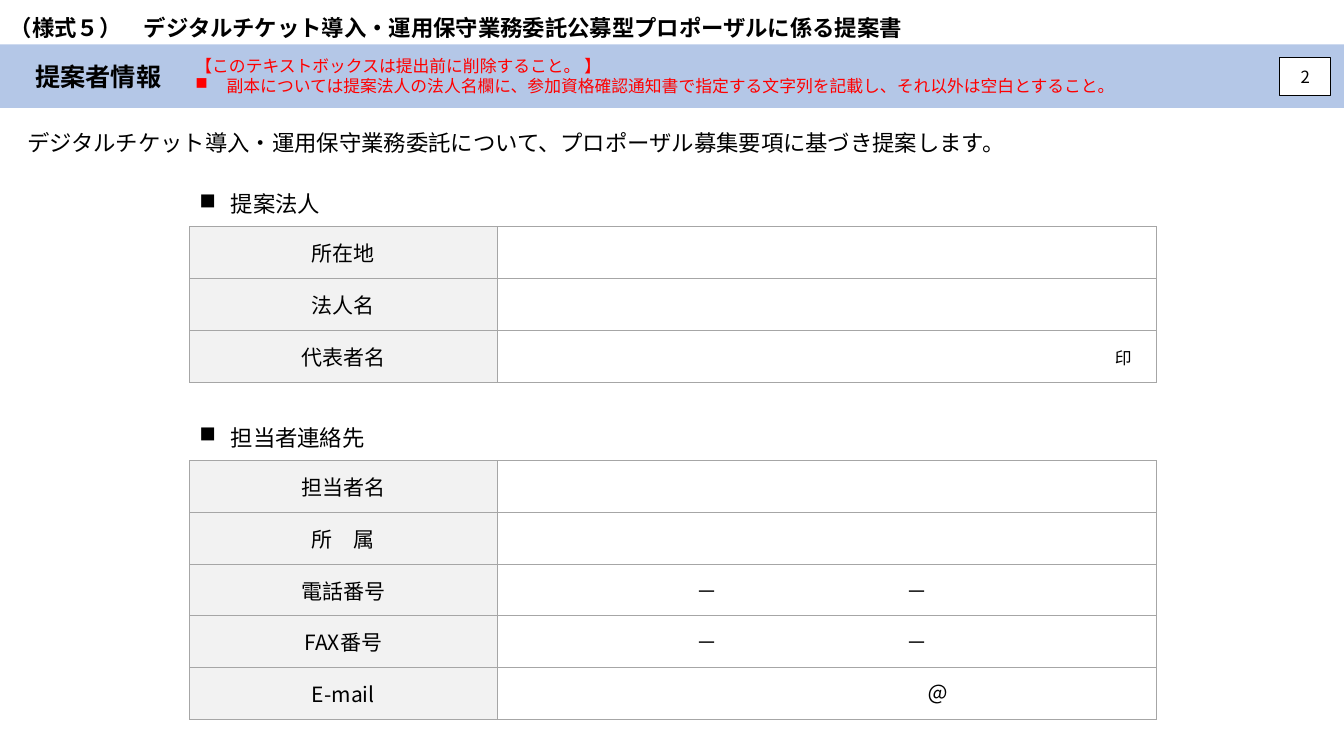
from pptx import Presentation
from pptx.dml.color import RGBColor as RGB
from pptx.enum.shapes import MSO_SHAPE as Shape
from pptx.enum.text import MSO_ANCHOR as Anchor, MSO_AUTO_SIZE as Fit, PP_ALIGN as Align
from pptx.oxml.ns import qn
from pptx.util import Inches, Pt
from lxml.etree import SubElement as Sub

FONT = "Noto Sans CJK JP"
BLACK, WHITE, RED = "000000", "FFFFFF", "FF0000"
BLUE, GREY, EDGE = "B4C7E7", "F2F2F2", "A6A6A6"
WIDE, TALL = 13.33, 7.5
LEFT, COLS = 1.88, (3.05, 6.54)
HEAD, ROW = 0.41, 0.513

OWNER = [("所在地", ""), ("法人名", ""), ("代表者名", "")]
DASHES = "\t－\t－"
CONTACT = [("担当者名", ""), ("所　属", ""), ("電話番号", DASHES),
           ("FAX番号", DASHES), ("E-mail", "\t＠")]
STOPS = {DASHES: (1.88, 3.96), "\t＠": (4.17,)}


def paint(fill, color):
    """Give a fill one solid colour."""
    fill.solid()
    fill.fore_color.rgb = RGB.from_string(color)


def style(para, size, color=BLACK, bold=False, align=Align.LEFT):
    """Set the font and alignment of a paragraph."""
    font = para.font
    font.name, font.size, font.bold = FONT, Pt(size), bold
    font.color.rgb = RGB.from_string(color)
    para.alignment = align
    prop = para._p.get_or_add_pPr().find(qn("a:defRPr"))
    Sub(prop, qn("a:ea")).set("typeface", FONT)


def bullet(para):
    """Add a square bullet with a hanging indent."""
    prop = para._p.get_or_add_pPr()
    prop.set("marL", str(Inches(0.31)))
    prop.set("indent", str(-Inches(0.31)))
    mark = Sub(prop, qn("a:buChar"))
    mark.set("char", "■")
    prop.insert(0, mark)


def tabs(para, stops):
    """Set left tab stops ahead of the paragraph's font."""
    prop = para._p.get_or_add_pPr()
    group = Sub(prop, qn("a:tabLst"))
    for stop in stops:
        tab = Sub(group, qn("a:tab"))
        tab.set("pos", str(Inches(stop)))
        tab.set("algn", "l")
    prop.insert(0, group)


def label(slide, box, text, size, wrap=True, **look):
    """Place a text box and return its frame."""
    frame = slide.shapes.add_textbox(*map(Inches, box)).text_frame
    frame.word_wrap, frame.auto_size = wrap, Fit.SHAPE_TO_FIT_TEXT
    frame.text = text
    for para in frame.paragraphs:
        style(para, size, **look)
    return frame


def band(slide, box):
    """Fill the title band with its note and page number."""
    left, top, width, height = box
    title = slide.shapes.title
    title.left, title.top, title.width, title.height = map(Inches, box)
    paint(title.fill, BLUE)
    frame = title.text_frame
    frame.text = "提案者情報"
    frame.vertical_anchor, frame.auto_size = Anchor.MIDDLE, Fit.NONE
    frame.margin_left = Inches(0.35)
    para = frame.paragraphs[0]
    para.line_spacing = 1.0
    style(para, 18, bold=True)

    note = label(slide, (left + 1.84, top + 0.06, 9.84, 0.5),
                 "【このテキストボックスは提出前に削除すること。 】\n"
                 "副本については提案法人の法人名欄に、参加資格確認通知書で指定する"
                 "文字列を記載し、それ以外は空白とすること。", 12, color=RED)
    bullet(note.paragraphs[1])

    page = slide.shapes.add_shape(Shape.RECTANGLE, *map(
        Inches, (left + width - 0.64, top + 0.13, 0.51, 0.38)))
    page.shadow.inherit = False
    paint(page.fill, WHITE)
    paint(page.line.fill, BLACK)
    page.line.width = Pt(0.75)
    page.text_frame.text = "2"
    page.text_frame.vertical_anchor = Anchor.MIDDLE
    style(page.text_frame.paragraphs[0], 12, align=Align.CENTER)


def border(cell):
    """Draw thin grey lines on all four sides of a cell."""
    prop = cell._tc.get_or_add_tcPr()
    for at, side in enumerate(("lnL", "lnR", "lnT", "lnB")):
        line = Sub(prop, qn("a:" + side))
        line.set("w", str(Pt(0.5)))
        solid = Sub(line, qn("a:solidFill"))
        Sub(solid, qn("a:srgbClr")).set("val", EDGE)
        prop.insert(at, line)


def form(slide, left, top, head, rows):
    """Place a bulleted heading above a two-column form."""
    bullet(label(slide, (left, top, 9.78, 0.37), head, 16).paragraphs[0])
    table = slide.shapes.add_table(len(rows), len(COLS), *map(
        Inches, (left, top + HEAD, sum(COLS), ROW * len(rows)))).table
    table.first_row = table.horz_banding = False
    for col, width in zip(table.columns, COLS):
        col.width = Inches(width)
    for y, row in enumerate(rows):
        for x, text in enumerate(row):
            cell = table.cell(y, x)
            cell.text = text
            cell.vertical_anchor = Anchor.MIDDLE
            paint(cell.fill, WHITE if x else GREY)
            border(cell)
            para = cell.text_frame.paragraphs[0]
            style(para, 15, align=Align.LEFT if x else Align.CENTER)
            if text in STOPS:
                tabs(para, STOPS[text])
            if not x:
                cell.margin_left = cell.margin_right = Inches(0.06)
                cell.margin_top = cell.margin_bottom = 0


def main():
    """Build the proposal form slide."""
    deck = Presentation()
    deck.slide_width, deck.slide_height = Inches(WIDE), Inches(TALL)
    slide = deck.slides.add_slide(deck.slide_layouts[5])
    band(slide, (0, 0.44, WIDE, 0.63))
    label(slide, (0, 0.09, 10, 0.37),
          "（様式５）　デジタルチケット導入・運用保守業務委託公募型プロポーザルに係る提案書",
          16, bold=True)
    label(slide, (0.17, 1.23, 12.52, 0.37),
          "デジタルチケット導入・運用保守業務委託について、"
          "プロポーザル募集要項に基づき提案します。", 16)
    form(slide, LEFT, 1.84, "提案法人", OWNER)
    form(slide, LEFT, 4.16, "担当者連絡先", CONTACT)
    label(slide, (10.96, 3.4, 0.37, 0.3), "印", 12, wrap=False)
    deck.save("out.pptx")


if __name__ == "__main__":
    main()
